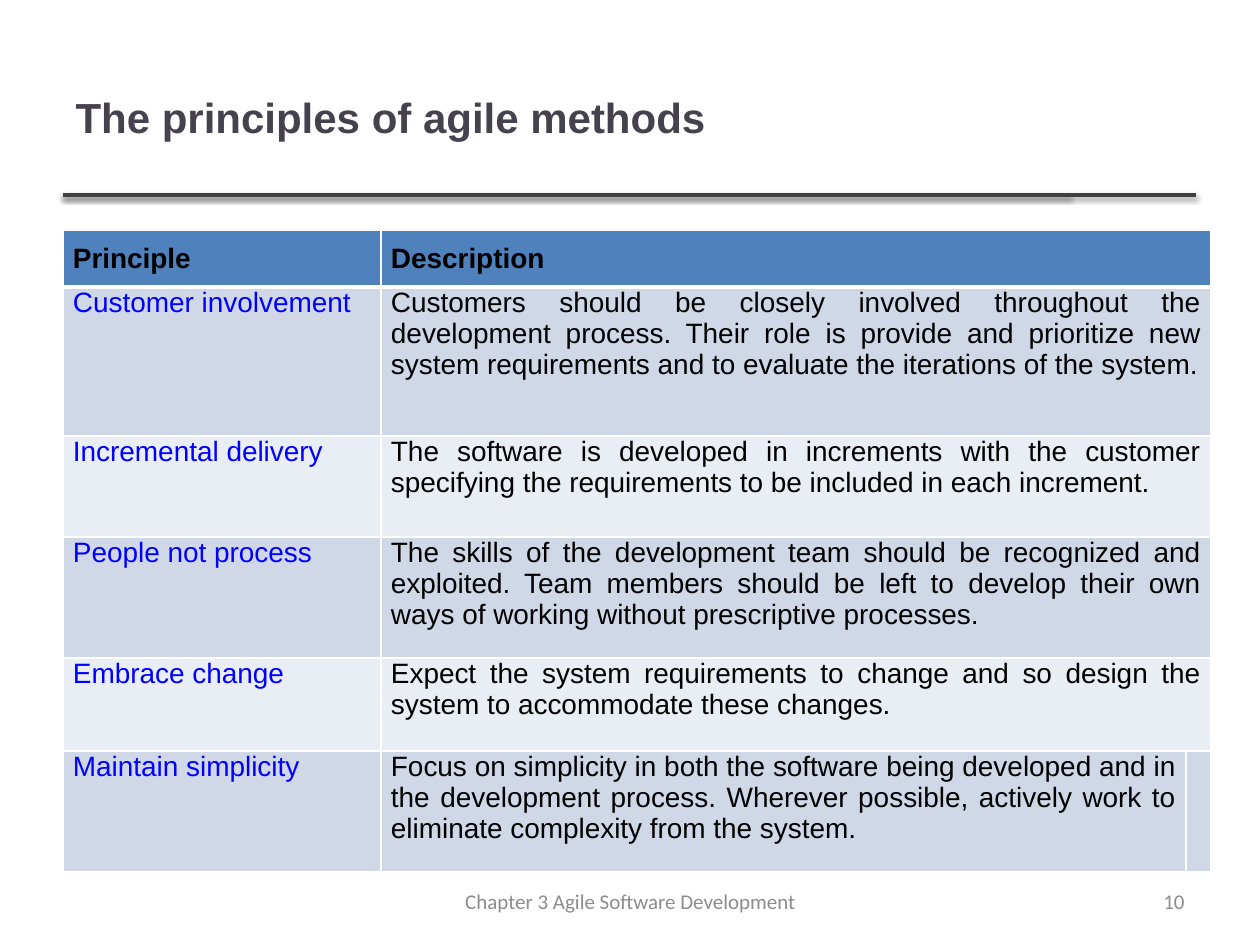
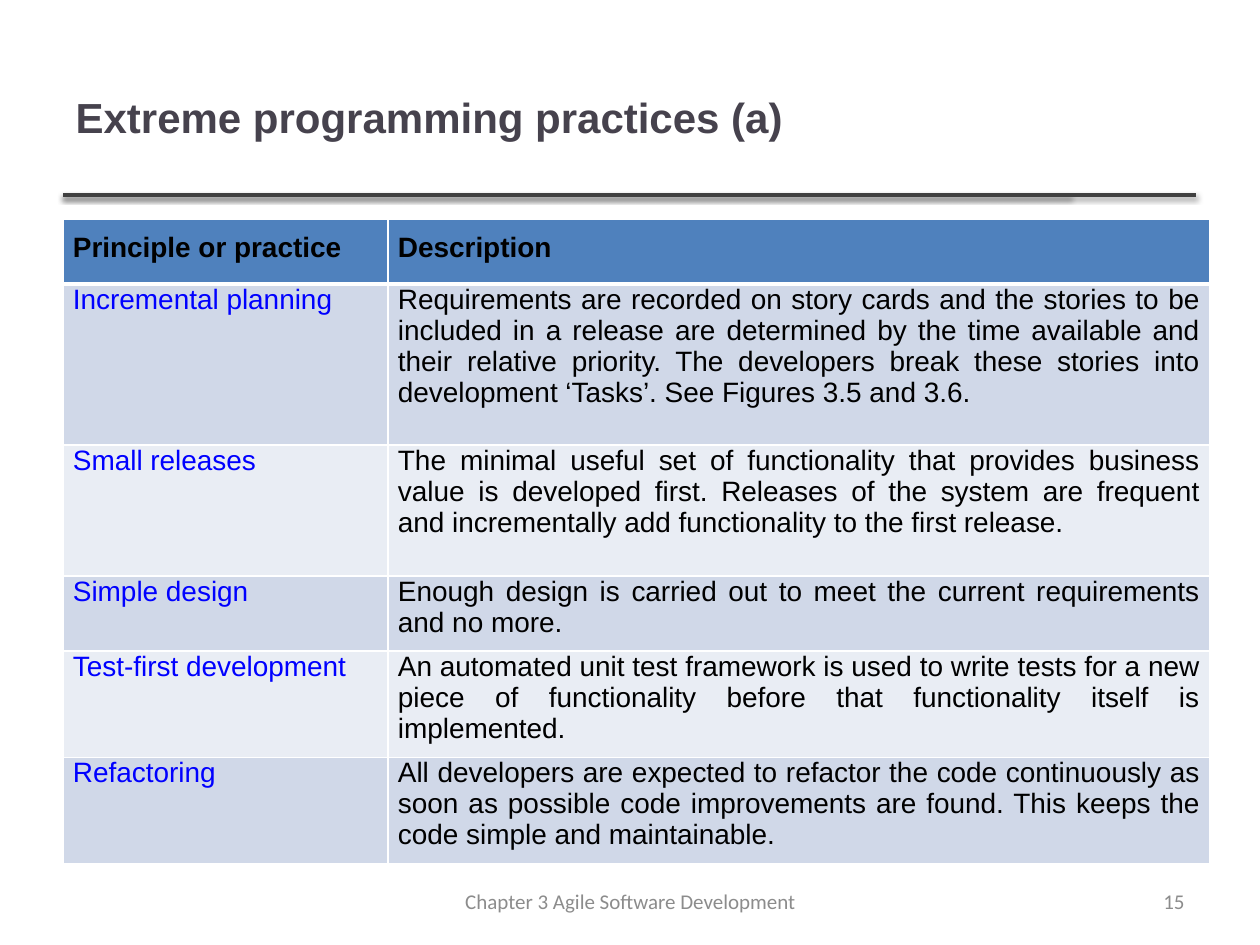
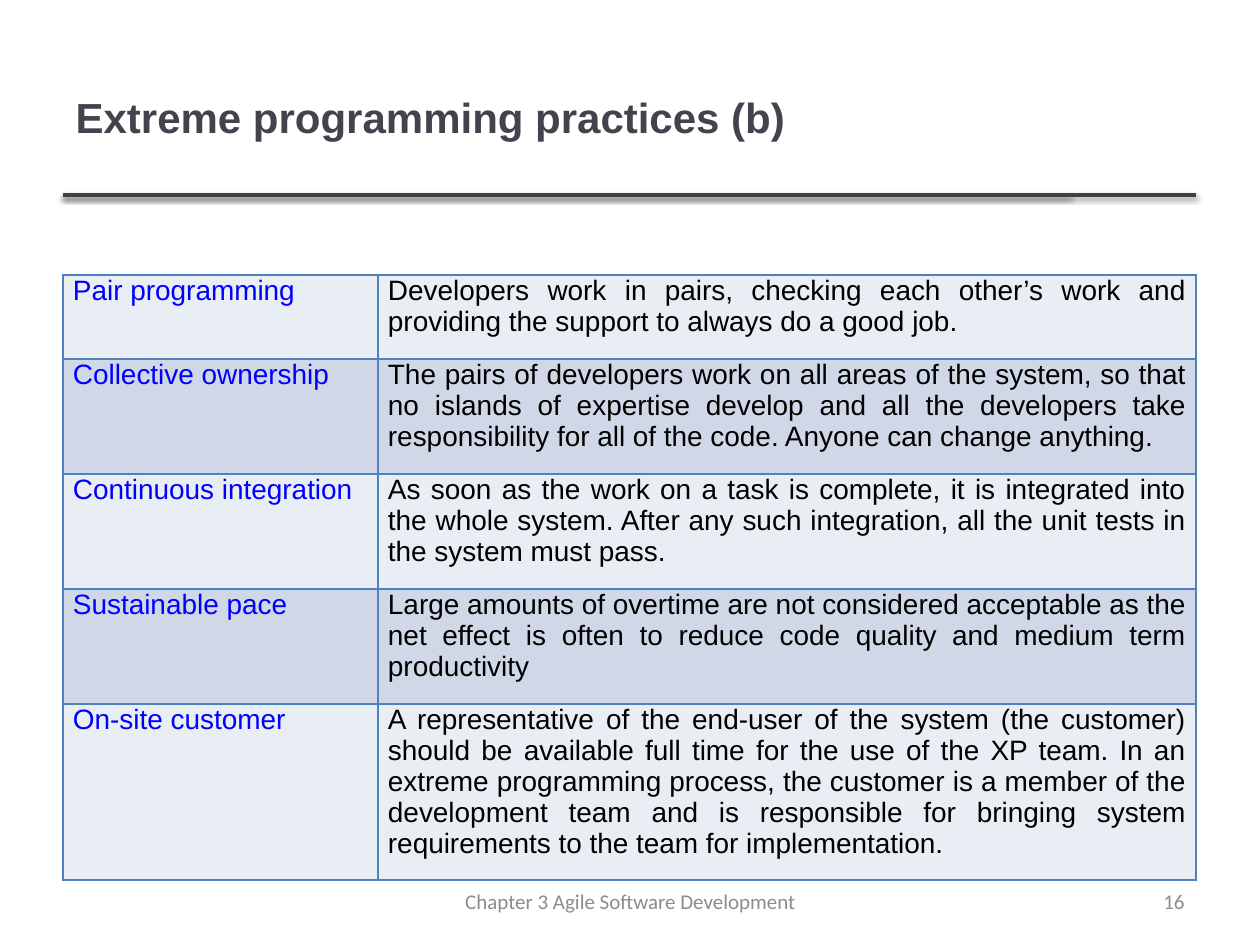
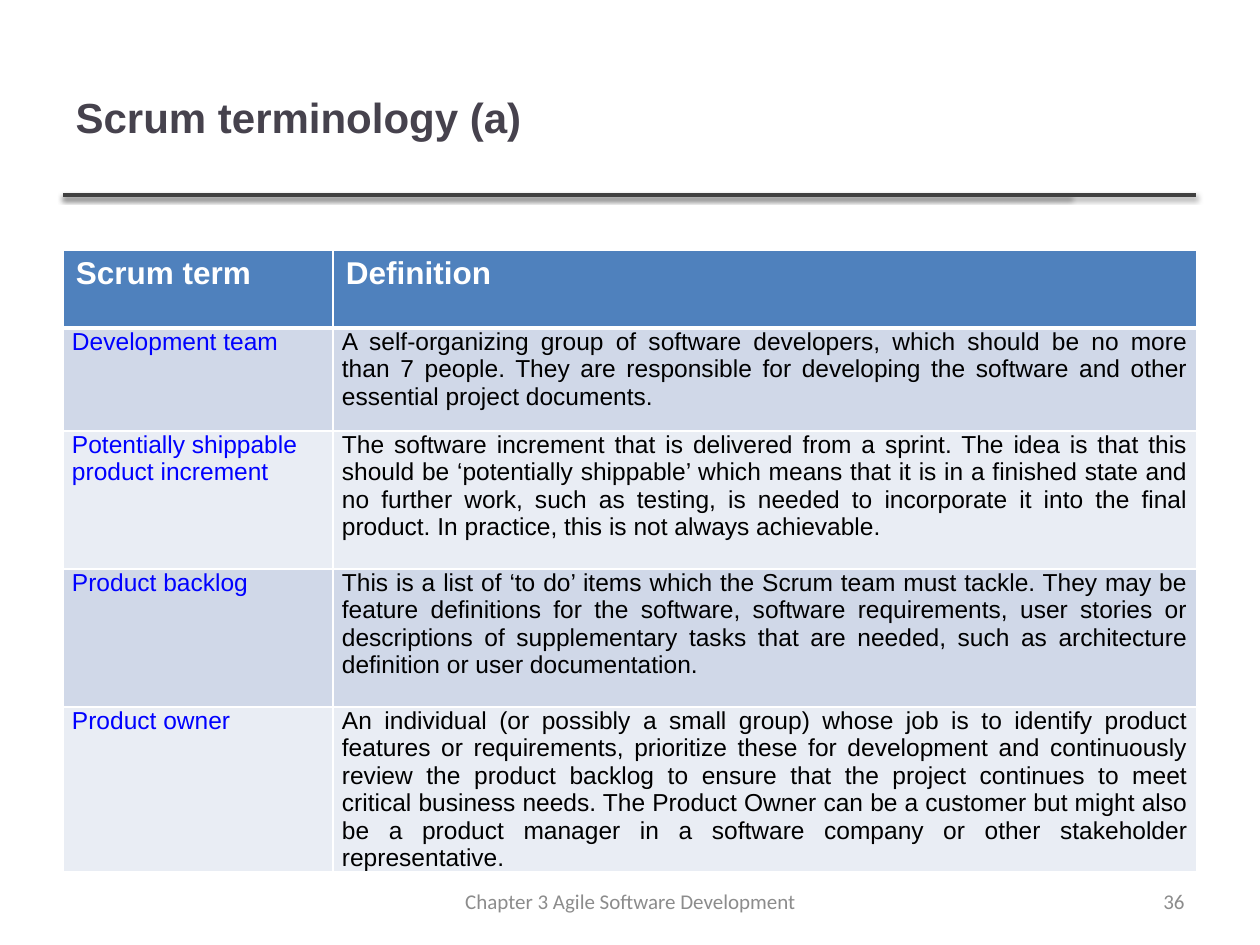
"""Build four slides of tables on agile methods, with a shared title rule and footer."""
from lxml import etree
from pptx import Presentation
from pptx.dml.color import RGBColor
from pptx.enum.shapes import MSO_CONNECTOR
from pptx.enum.text import MSO_ANCHOR, MSO_AUTO_SIZE, PP_ALIGN
from pptx.oxml import parse_xml
from pptx.oxml.ns import nsdecls
from pptx.util import Pt

STRAIGHT = MSO_CONNECTOR.STRAIGHT
MIDDLE = MSO_ANCHOR.MIDDLE
NO_FIT = MSO_AUTO_SIZE.NONE
LEFT, CENTER, RIGHT, JUSTIFY = PP_ALIGN.LEFT, PP_ALIGN.CENTER, PP_ALIGN.RIGHT, PP_ALIGN.JUSTIFY

FOOTER = "Chapter 3 Agile Software Development"
TITLE_INK, RULE, GREY = "46424D", "404040", "8C8C8C"
BLUE, TERM, BLACK, WHITE = "4F81BD", "0000FF", "000000", "FFFFFF"
BANDS = ("E9EDF4", "D0D8E8")
MARGIN = 63

WIDE = {"head_size": 16, "head_ink": BLACK, "head_align": JUSTIFY, "head_insets": (10, 13, 13),
        "size": 16, "term_align": JUSTIFY, "insets": (10, 0, 13), "border": WHITE}
GRID = {**WIDE, "border": BLUE}
DENSE = {**WIDE, "head_size": 18, "head_ink": WHITE, "head_align": LEFT, "head_insets": (13, 6, 6),
         "size": 14, "term_align": LEFT, "insets": (9, 0, 0)}

SLIDES = [
    {"title": "The principles of agile methods", "number": "10", "style": WIDE, "top": 230,
     "cols": (318, 805, 18), "heights": (55, 149, 101, 121, 93, 121),
     "head": ("Principle", "Description"),
     "rows": [
         ("Customer involvement",
          "Customers should be closely involved throughout the development process. Their role is "
          "provide and prioritize new system requirements and to evaluate the iterations of the system."),
         ("Incremental delivery",
          "The software is developed in increments with the customer specifying the requirements "
          "to be included in each increment."),
         ("People not process",
          "The skills of the development team should be recognized and exploited. Team members "
          "should be left to develop their own ways of working without prescriptive processes."),
         ("Embrace change",
          "Expect the system requirements to change and so design the system to accommodate these changes."),
         ("Maintain simplicity",
          "Focus on simplicity in both the software being developed and in the development process. "
          "Wherever possible, actively work to eliminate complexity from the system.", "")]},
    {"title": "Extreme programming practices (a)", "number": "15", "style": WIDE, "top": 219,
     "cols": (325, 822), "heights": (65, 161, 131, 72, 102, 102),
     "head": ("Principle or practice", "Description"),
     "rows": [
         ("Incremental planning",
          "Requirements are recorded on story cards and the stories to be included in a release are "
          "determined by the time available and their relative priority. The developers break these "
          "stories into development ‘Tasks’. See Figures 3.5 and 3.6."),
         ("Small releases",
          "The minimal useful set of functionality that provides business value is developed first. "
          "Releases of the system are frequent and incrementally add functionality to the first release."),
         ("Simple design",
          "Enough design is carried out to meet the current requirements and no more."),
         ("Test-first development",
          "An automated unit test framework is used to write tests for a new piece of functionality "
          "before that functionality itself is implemented."),
         ("Refactoring",
          "All developers are expected to refactor the code continuously as soon as possible code "
          "improvements are found. This keeps the code simple and maintainable.")]},
    {"title": "Extreme programming practices (b)", "number": "16", "style": GRID, "top": 275,
     "cols": (315, 818), "heights": (84, 115, 115, 115, 176),
     "head": None,
     "rows": [
         ("Pair programming",
          "Developers work in pairs, checking each other’s work and providing the support to always "
          "do a good job."),
         ("Collective ownership",
          "The pairs of developers work on all areas of the system, so that no islands of expertise "
          "develop and all the developers take responsibility for all of the code. Anyone can change "
          "anything."),
         ("Continuous integration",
          "As soon as the work on a task is complete, it is integrated into the whole system. After "
          "any such integration, all the unit tests in the system must pass."),
         ("Sustainable pace",
          "Large amounts of overtime are not considered acceptable as the net effect is often to "
          "reduce code quality and medium term productivity"),
         ("On-site customer",
          "A representative of the end-user of the system (the customer) should be available full "
          "time for the use of the XP team. In an extreme programming process, the customer is a "
          "member of the development team and is responsible for bringing system requirements to "
          "the team for implementation.")]},
    {"title": "Scrum terminology (a)", "number": "36", "style": DENSE, "top": 250,
     "cols": (270, 864), "heights": (78, 103, 138, 138, 165),
     "head": ("Scrum term", "Definition"),
     "rows": [
         ("Development team",
          "A self-organizing group of software developers, which should be no more than 7 people. "
          "They are responsible for developing the software and other essential project documents."),
         ("Potentially shippable product increment",
          "The software increment that is delivered from a sprint. The idea is that this should be "
          "‘potentially shippable’ which means that it is in a finished state and no further work, "
          "such as testing, is needed to incorporate it into the final product. In practice, this "
          "is not always achievable."),
         ("Product backlog",
          "This is a list of ‘to do’ items which the Scrum team must tackle. They may be feature "
          "definitions for the software, software requirements, user stories or descriptions of "
          "supplementary tasks that are needed, such as architecture definition or user documentation."),
         ("Product owner",
          "An individual (or possibly a small group) whose job is to identify product features or "
          "requirements, prioritize these for development and continuously review the product "
          "backlog to ensure that the project continues to meet critical business needs. The Product "
          "Owner can be a customer but might also be a product manager in a software company or other "
          "stakeholder representative.")]},
]


def px(n):
    return round(n * 914400 / 126)


def rgb(value):
    return RGBColor.from_string(value)


def write(tf, text, size, ink, align, bold=False, font="Arial"):
    tf.text = text
    p = tf.paragraphs[0]
    p.alignment = align
    for r in p.runs:
        r.font.name, r.font.size, r.font.bold = font, Pt(size), bold
        r.font.color.rgb = rgb(ink)


def add_rules(prs, s):
    """Draw the two title rules and hand them to the slide master."""
    for i, right in enumerate((1070, 1196)):
        line = s.shapes.add_connector(STRAIGHT, px(MARGIN), px(195), px(right), px(195))
        line.line.color.rgb = rgb(RULE)
        line.line.width = Pt(2)
        line.element.spPr.append(parse_xml(
            f'<a:effectLst {nsdecls("a")}><a:outerShdw blurRad="40000" dist="20000" dir="5400000" '
            f'rotWithShape="0"><a:srgbClr val="{BLACK}"><a:alpha val="38000"/></a:srgbClr>'
            '</a:outerShdw></a:effectLst>'))
        line.element.nvCxnSpPr.cNvPr.set("id", str(20 + i))
        prs.slide_master.shapes.element.insert(2 + i, line.element)


def add_title(s, text):
    sp = s.shapes.title
    sp.left, sp.top, sp.width, sp.height = px(MARGIN), px(38), px(1006), px(157)
    tf = sp.text_frame
    tf.vertical_anchor, tf.auto_size = MIDDLE, NO_FIT
    write(tf, text, 24, TITLE_INK, LEFT, True)


def add_footer(s, number):
    for text, x, width, align in ((FOOTER, 431, 399, CENTER), (number, 903, 294, RIGHT)):
        tf = s.shapes.add_textbox(px(x), px(876), px(width), px(50)).text_frame
        tf.word_wrap, tf.vertical_anchor = True, MIDDLE
        write(tf, text, 12, GREY, align, font="Calibri")


def set_borders(cell, color, top, bottom):
    tcPr = cell._tc.get_or_add_tcPr()
    for i, (side, width) in enumerate((("L", 1), ("R", 1), ("T", top), ("B", bottom))):
        ln = parse_xml(f'<a:ln{side} {nsdecls("a")} w="{Pt(width)}"/>')
        fill = etree.SubElement(ln, ln.tag.replace(f"ln{side}", "solidFill"))
        etree.SubElement(fill, ln.tag.replace(f"ln{side}", "srgbClr"), val=color)
        tcPr.insert(i, ln)


def fill_cell(cell, text, style, row, col, head):
    is_head = head and row == 0
    inset, top, bottom = style["head_insets" if is_head else "insets"]
    cell.margin_left = cell.margin_right = px(inset)
    cell.margin_top, cell.margin_bottom = px(top), px(bottom)
    cell.fill.solid()
    cell.fill.fore_color.rgb = rgb(BLUE if is_head else BANDS[row % 2])
    set_borders(cell, style["border"], 3 if head and row == 1 else 1, 3 if is_head else 1)
    if is_head:
        write(cell.text_frame, text, style["head_size"], style["head_ink"], style["head_align"], True)
    elif col == 0:
        write(cell.text_frame, text, style["size"], TERM, style["term_align"])
    else:
        write(cell.text_frame, text, style["size"], BLACK, JUSTIFY)


def add_terms(s, data):
    """Add the table; a row with fewer texts than columns spans its last cell."""
    cols, heights, head = data["cols"], data["heights"], bool(data["head"])
    rows = ([data["head"]] if head else []) + data["rows"]
    table = s.shapes.add_table(len(rows), len(cols), px(MARGIN), px(data["top"]),
                               px(sum(cols)), px(sum(heights))).table
    table.first_row, table.horz_banding = head, False
    for column, width in zip(table.columns, cols):
        column.width = px(width)
    for i, (texts, height) in enumerate(zip(rows, heights)):
        table.rows[i].height = px(height)
        for j, text in enumerate(texts):
            fill_cell(table.cell(i, j), text, data["style"], i, j, head)
        if len(texts) < len(cols):
            table.cell(i, len(texts) - 1).merge(table.cell(i, len(cols) - 1))


def main():
    prs = Presentation()
    prs.slide_width, prs.slide_height = px(1260), px(945)
    for i, data in enumerate(SLIDES):
        s = prs.slides.add_slide(prs.slide_layouts[5])
        if i == 0:
            add_rules(prs, s)
        add_title(s, data["title"])
        add_terms(s, data)
        add_footer(s, data["number"])
    prs.save("out.pptx")


if __name__ == "__main__":
    main()
